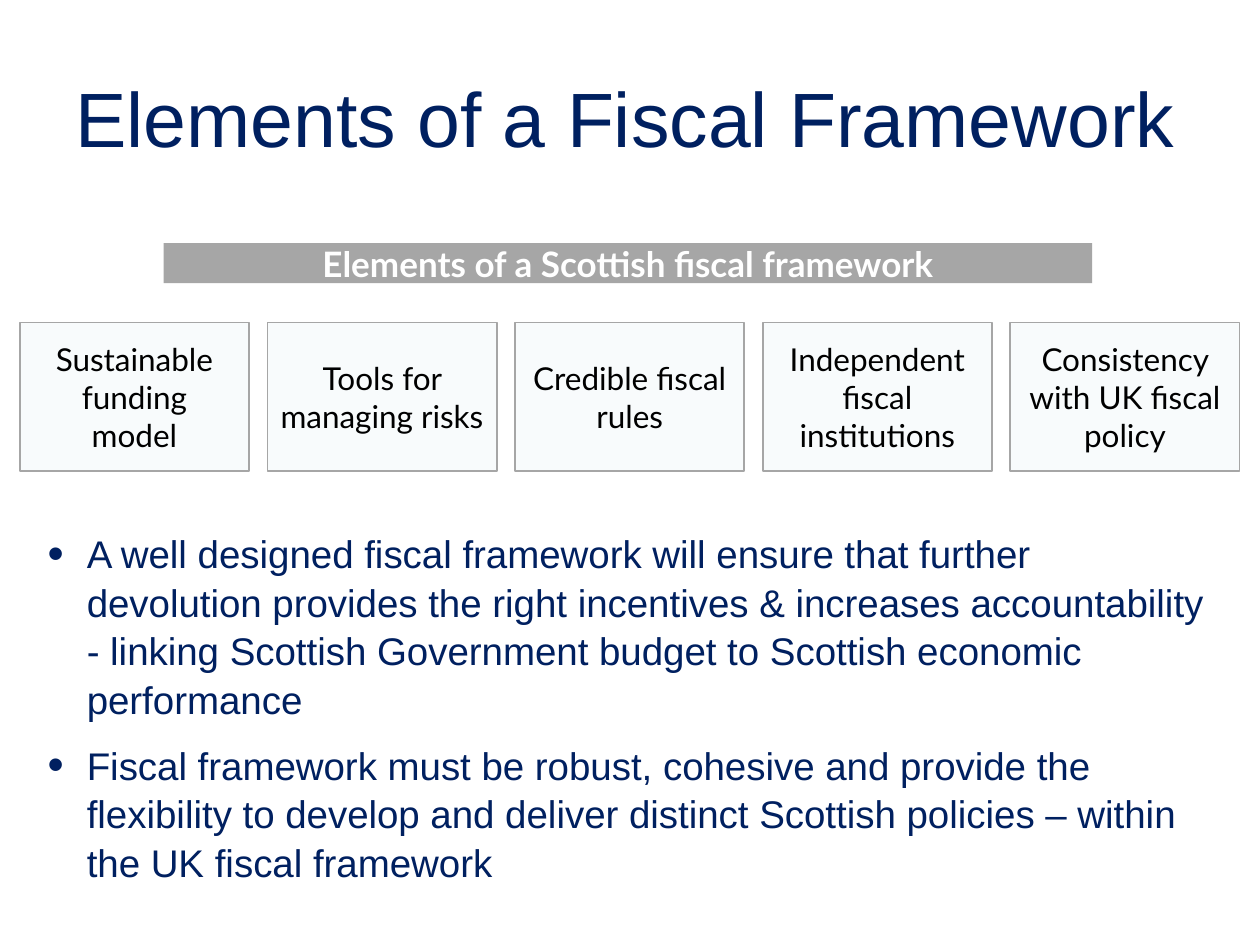
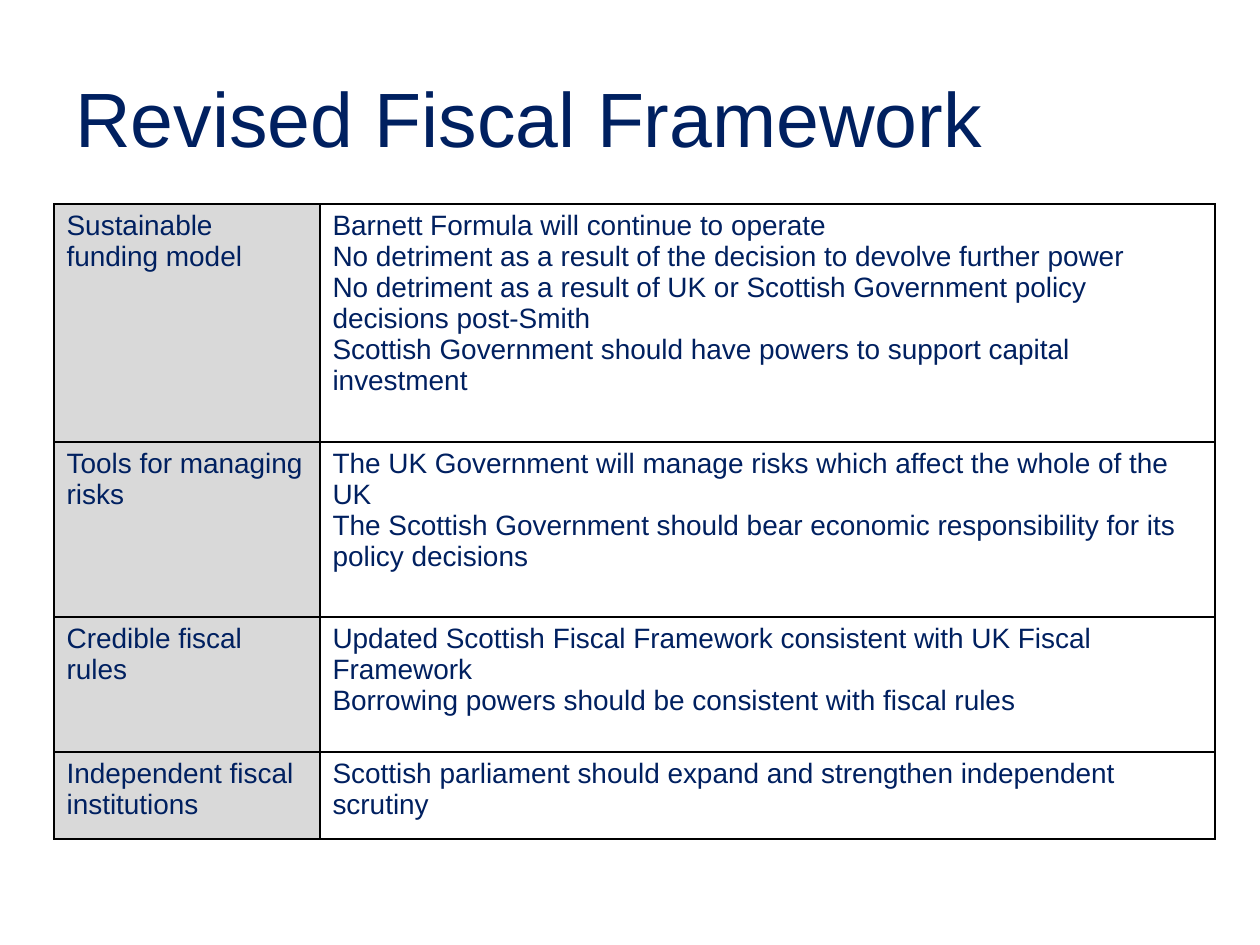
from lxml.etree import SubElement as SubEl
from pptx import Presentation
from pptx.dml.color import RGBColor as Rgb
from pptx.enum.shapes import MSO_SHAPE as Shape
from pptx.enum.text import MSO_ANCHOR as Anchor, PP_ALIGN as Align
from pptx.oxml import parse_xml
from pptx.oxml.ns import nsdecls, qn
from pptx.util import Cm, Pt

NAVY, GREY, PALE = "002060", "A6A6A6", "F8FBFC"
WHITE, BLACK, SILVER = "FFFFFF", "000000", "D9D9D9"

TITLE = {"size": Pt(44), "name": "Arial", "color": NAVY}
BODY = {"size": Pt(22), "name": "Arial", "color": NAVY}
CELL = {"size": Pt(16), "name": "Arial", "color": NAVY}
BAND = {"size": Pt(20), "name": "Lato", "color": WHITE, "bold": True}
LABEL = {"size": Pt(18), "name": "Lato", "color": BLACK}

PARTS = ["Sustainable\vfunding\vmodel", "Tools for managing risks",
         "Credible fiscal rules", "Independent fiscal institutions",
         "Consistency with UK fiscal policy"]
POINTS = [
    "A well designed fiscal framework will ensure that further devolution "
    "provides the right incentives & increases accountability - linking "
    "Scottish Government budget to Scottish economic performance",
    "Fiscal framework must be robust, cohesive and provide the flexibility to "
    "develop and deliver distinct Scottish policies – within the UK fiscal "
    "framework",
]
ROWS = [
    (4.8, "Sustainable funding model", [
        "Barnett Formula will continue to operate",
        "No detriment as a result of the decision to devolve further power",
        "No detriment as a result of UK or Scottish Government policy "
        "decisions post-Smith",
        "Scottish Government should have powers to support capital "
        "investment"]),
    (3.53, "Tools for managing risks", [
        "The UK Government will manage risks which affect the whole of the UK",
        "The Scottish Government should bear economic responsibility for its "
        "policy decisions"]),
    (2.72, "Credible fiscal rules", [
        "Updated Scottish Fiscal Framework consistent with UK Fiscal "
        "Framework",
        "Borrowing powers should be consistent with fiscal rules"]),
    (1.75, "Independent fiscal institutions", [
        "Scottish parliament should expand and strengthen independent "
        "scrutiny"]),
]


def shade(hue):
    return Rgb.from_string(hue)


def style(item, form):
    for key, value in form.items():
        if key == "color":
            item.color.rgb = shade(value)
        else:
            setattr(item, key, value)


def write(frame, lines, font, form=None, mark=None):
    frame.word_wrap = True
    for n, line in enumerate(lines):
        para = frame.paragraphs[0] if n == 0 else frame.add_paragraph()
        para.text = line
        style(para, form or {})
        if n == 0:
            para.space_before = Pt(0)
        if mark:
            mark(para)
        style(para.font, font)
        for run in para.runs:
            style(run.font, font)


def bullet(para):
    props = para._p.get_or_add_pPr()
    props.set("marL", str(Cm(0.79)))
    props.set("indent", str(Cm(-0.79)))
    SubEl(props, qn("a:buSzPct")).set("val", "120000")
    SubEl(props, qn("a:buFont")).set("typeface", "Arial")
    SubEl(props, qn("a:buChar")).set("char", "•")


def title(slide, text, box):
    frame = slide.shapes.add_textbox(*map(Cm, box)).text_frame
    frame.vertical_anchor = Anchor.MIDDLE
    write(frame, [text], TITLE)


def panel(slide, text, box, fill, font, edge=None):
    shape = slide.shapes.add_shape(Shape.RECTANGLE, *map(Cm, box))
    shape.shadow.inherit = False
    shape.fill.solid()
    shape.fill.fore_color.rgb = shade(fill)
    if edge:
        style(shape.line, {"color": edge, "width": Pt(1)})
    else:
        shape.line.fill.background()
    frame = shape.text_frame
    frame.vertical_anchor = Anchor.MIDDLE
    write(frame, [text], font, {"alignment": Align.CENTER, "space_after": Pt(3)})


def strip(slide, box):
    left, top, width, height = box
    gap = 0.37
    size = (width - gap * (len(PARTS) - 1)) / len(PARTS)
    for n, part in enumerate(PARTS):
        spot = (left + n * (size + gap), top, size, height)
        panel(slide, part, spot, PALE, LABEL, GREY)


def points(slide, box):
    frame = slide.shapes.add_textbox(*map(Cm, box)).text_frame
    form = {"space_before": Pt(5), "space_after": Pt(5), "line_spacing": 1.05}
    write(frame, POINTS, BODY, form, bullet)


def edges(cell):
    props = cell._tc.get_or_add_tcPr()
    for n, side in enumerate("LRTB"):
        props.insert(n, parse_xml(
            f'<a:ln{side} {nsdecls("a")} w="{Pt(1)}"><a:solidFill>'
            f'<a:srgbClr val="{BLACK}"/></a:solidFill></a:ln{side}>'))


def grid(slide, box):
    table = slide.shapes.add_table(len(ROWS), 2, *map(Cm, box)).table
    style(table, {"first_row": False, "horz_banding": False})
    first = 5.36
    for col, width in zip(table.columns, (first, box[2] - first)):
        col.width = Cm(width)
    for row, (height, head, lines) in zip(table.rows, ROWS):
        row.height = Cm(height)
        for cell, text, fill in zip(row.cells, ([head], lines), (SILVER, WHITE)):
            cell.fill.solid()
            cell.fill.fore_color.rgb = shade(fill)
            edges(cell)
            write(cell.text_frame, text, CELL)


def main():
    deck = Presentation()
    style(deck, {"slide_width": Cm(25.4), "slide_height": Cm(19.05)})
    pages = []
    for text in ("Elements of a Fiscal Framework", "Revised Fiscal Framework"):
        page = deck.slides.add_slide(deck.slide_layouts[6])
        title(page, text, (1.27, 0.76, 22.86, 3.18))
        pages.append(page)
    parts, plan = pages
    panel(parts, "Elements of a Scottish fiscal framework",
          (3.3, 4.9, 18.72, 0.81), GREY, BAND)
    strip(parts, (0.4, 6.5, 24.59, 3))
    points(parts, (0.71, 10.52, 24, 7.19))
    grid(plan, (1.09, 4.11, 23.4, 12.8))
    deck.save("out.pptx")


if __name__ == "__main__":
    main()
